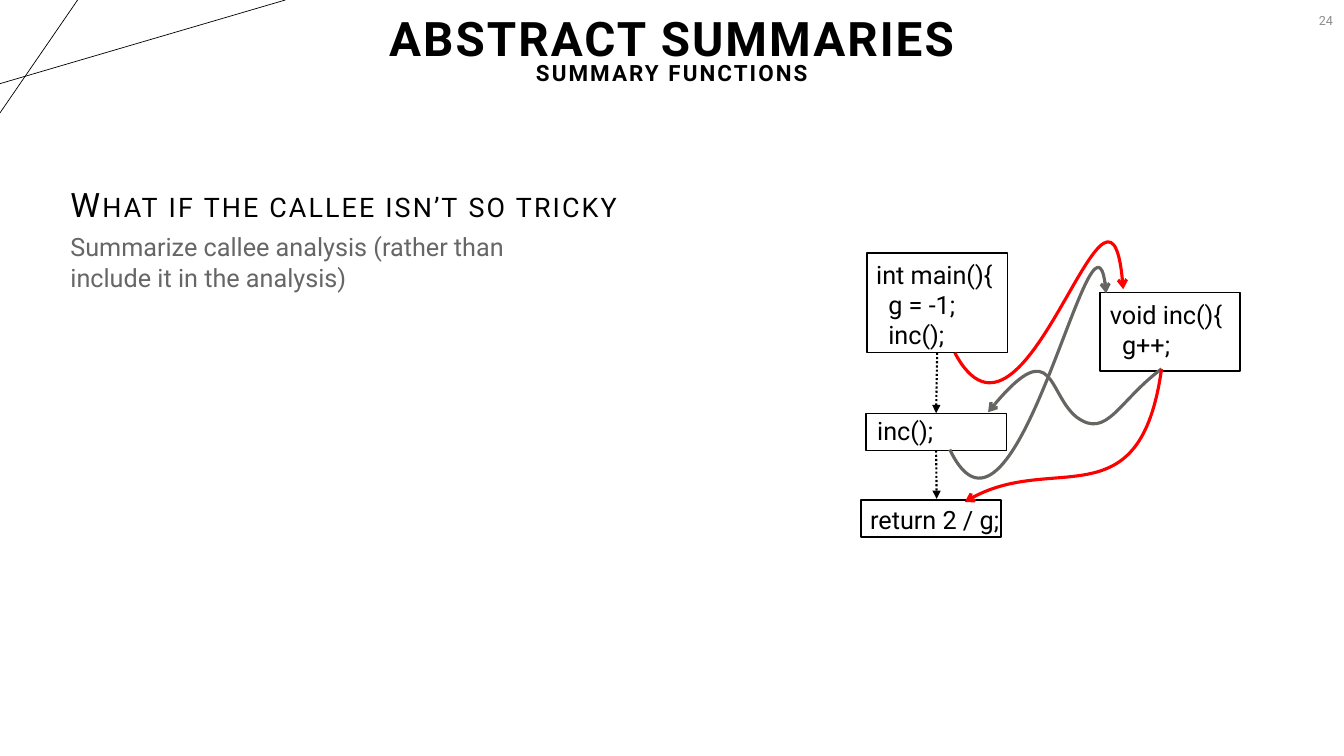
from dataclasses import dataclass

from lxml.etree import SubElement
from pptx import Presentation
from pptx.dml.color import RGBColor
from pptx.enum.dml import MSO_LINE
from pptx.enum.shapes import MSO_CONNECTOR, MSO_SHAPE
from pptx.enum.text import MSO_ANCHOR, PP_ALIGN
from pptx.oxml.ns import qn
from pptx.util import Inches, Pt

STRAIGHT = MSO_CONNECTOR.STRAIGHT
RECTANGLE = MSO_SHAPE.RECTANGLE
DOTTED = MSO_LINE.ROUND_DOT
TOP, MIDDLE = MSO_ANCHOR.TOP, MSO_ANCHOR.MIDDLE
LEFT, CENTER, RIGHT = PP_ALIGN.LEFT, PP_ALIGN.CENTER, PP_ALIGN.RIGHT
TOP_SIDE, BOTTOM_SIDE = 0, 2


@dataclass(frozen=True)
class Theme:
    font: str = "Roboto"
    ink: str = "000000"
    paper: str = "FFFFFF"
    body: str = "666666"
    page: str = "8C8C8C"
    first_call: str = "FF0000"
    second_call: str = "666562"
    title_size: int = 34
    heading_size: int = 24
    body_size: int = 18
    subtitle_size: int = 16
    page_size: int = 9
    tracking: int = 150
    heading_spacing: float = 0.9


THEME = Theme()


# Shared helpers
def color(value):
    return RGBColor.from_string(value)


def format_paragraph(paragraph, size, ink, align=LEFT, bold=False, tracked=False, small_caps=False):
    paragraph.alignment = align
    if tracked:
        paragraph.line_spacing = THEME.heading_spacing
    for run in paragraph.runs:
        run.font.name = THEME.font
        run.font.size = Pt(size)
        run.font.bold = bold
        run.font.color.rgb = color(ink)
        properties = run.font._element
        if tracked:
            properties.set("spc", str(THEME.tracking))
        if small_caps:
            properties.set("cap", "small")


def add_text(slide, box, text, size, ink, anchor=TOP, **style):
    text_box = slide.shapes.add_textbox(*map(Inches, box))
    frame = text_box.text_frame
    frame.word_wrap = True
    frame.vertical_anchor = anchor
    frame.text = text
    format_paragraph(frame.paragraphs[0], size, ink, **style)
    return text_box


def add_line(slide, start, end, width):
    line = slide.shapes.add_connector(STRAIGHT, *map(Inches, (*start, *end)))
    line.line.color.rgb = color(THEME.ink)
    line.line.width = Pt(width)
    SubElement(line._element.spPr, qn("a:effectLst"))
    return line


def add_arrowhead(shape, kind):
    SubElement(shape.line._get_or_add_ln(), qn("a:tailEnd"), type=kind)


def curve_range(values, steps=100):
    """Lowest and highest value along joined cubic curves on one axis."""
    reached = []
    for first in range(0, len(values) - 1, 3):
        a, b, c, d = values[first:first + 4]
        for step in range(steps + 1):
            t = step / steps
            u = 1 - t
            reached.append(a * u ** 3 + 3 * b * t * u ** 2 + 3 * c * u * t ** 2 + d * t ** 3)
    return min(reached), max(reached)


# Corner lines, page number and titles
def add_header(slide, left, top, width):
    add_line(slide, (left, top + 0.83), (left + 2.83, top), 0.5)
    add_line(slide, (left + 0.77, top), (left, top + 1.12), 0.5)
    add_text(slide, (left + width - 3.01, top, 3, 0.4), "24", THEME.page_size,
             THEME.page, MIDDLE, align=RIGHT)
    titles = (("ABSTRACT SUMMARIES", THEME.title_size, -0.32),
              ("SUMMARY FUNCTIONS", THEME.subtitle_size, 0.01))
    for text, size, offset in titles:
        add_text(slide, (left + 0.01, top + offset, width - 0.02, 1.45), text, size,
                 THEME.ink, MIDDLE, align=CENTER, bold=True, tracked=True)


# Heading with its explanation
def add_explanation(slide, left, top):
    heading = add_text(slide, (left, top, 8.37, 0.83), "What if the callee isn’t so tricky",
                       THEME.heading_size, THEME.ink, tracked=True, small_caps=True)
    heading.text_frame.paragraphs[0].space_before = Pt(10)
    add_text(slide, (left, top + 0.43, 4.53, 0.71),
             "Summarize callee analysis (rather than include it in the analysis)",
             THEME.body_size, THEME.body)


# Call graph
def add_code_box(slide, box, inset, first_line, *indented_lines):
    shape = slide.shapes.add_shape(RECTANGLE, *map(Inches, box))
    shape.shadow.inherit = False
    shape.fill.solid()
    shape.fill.fore_color.rgb = color(THEME.paper)
    shape.line.color.rgb = color(THEME.ink)
    shape.line.width = Pt(1)
    frame = shape.text_frame
    frame.word_wrap = True
    frame.vertical_anchor = TOP
    frame.margin_left, frame.margin_top = map(Inches, inset)
    frame.margin_right = frame.margin_bottom = 0
    frame.text = "\n".join((first_line, *indented_lines))
    for index, paragraph in enumerate(frame.paragraphs):
        format_paragraph(paragraph, THEME.body_size, THEME.ink)
        if index:
            paragraph._p.get_or_add_pPr().set("marL", str(Inches(0.12)))
    return shape


def add_curve(slide, controls, ink):
    points = [(Inches(x), Inches(y)) for x, y in controls]
    builder = slide.shapes.build_freeform(*points[0])
    builder.add_line_segments(points[1:], close=False)
    curve = builder.convert_to_shape()

    # Fit the frame to the curve itself rather than to its control points
    (left, right), (top, bottom) = (curve_range(axis) for axis in zip(*points))
    left, top, width, height = map(round, (left, top, right - left, bottom - top))
    curve.left, curve.top, curve.width, curve.height = left, top, width, height

    # Replace the straight segments by cubic ones
    outline = curve._element.find(".//" + qn("a:path"))
    outline.set("w", str(width))
    outline.set("h", str(height))
    for segment in list(outline):
        outline.remove(segment)
    for index, (x, y) in enumerate(points):
        if index == 0:
            segment = SubElement(outline, qn("a:moveTo"))
        elif index % 3 == 1:
            segment = SubElement(outline, qn("a:cubicBezTo"))
        SubElement(segment, qn("a:pt"), x=str(x - left), y=str(y - top))

    curve.shadow.inherit = False
    curve.fill.background()
    curve.line.color.rgb = color(ink)
    curve.line.width = Pt(2.25)
    add_arrowhead(curve, "arrow")


def add_call_graph(slide, left, top):
    def place(x, y, *size):
        return (left + x, top + y, *size)

    main_box = add_code_box(slide, place(0.1, 0.21, 1.39, 0.99), (0.09, 0.06),
                            "int main(){", "g = -1;", "inc();")
    second = add_code_box(slide, place(0.09, 1.8, 1.39, 0.37), (0.11, 0.02), "inc();")
    add_code_box(slide, place(0.04, 2.66, 1.39, 0.37), (0.09, 0.04), "return 2 / g;")
    add_code_box(slide, place(2.41, 0.6, 1.39, 0.78), (0.1, 0.07), "void inc(){", "g++;")

    # Steps within main
    to_second = add_line(slide, place(0.79, 1.2), place(0.78, 1.8), 1.5)
    to_second.begin_connect(main_box, BOTTOM_SIDE)
    to_second.end_connect(second, TOP_SIDE)
    to_return = add_line(slide, place(0.78, 2.17), place(0.79, 2.65), 1.5)
    to_return.begin_connect(second, BOTTOM_SIDE)
    for step in (to_second, to_return):
        step.line.dash_style = DOTTED
        add_arrowhead(step, "triangle")

    # Calls into the callee and returns from it
    callee_exit = (3.02, 1.36)
    curves = (
        (THEME.second_call, ((0.92, 2.16), (1.57, 3.52), (2.37, -0.71), (2.47, 0.61))),
        (THEME.second_call, (callee_exit, (2.59, 1.68), (2.48, 2.06), (2.18, 1.84),
                             (1.89, 1.61), (1.96, 0.97), (1.3, 1.79))),
        (THEME.first_call, ((0.97, 1.2), (1.67, 2.51), (2.52, -1.16), (2.64, 0.57))),
        (THEME.first_call, (callee_exit, (2.81, 2.87), (1.91, 2.15), (1.07, 2.68))),
    )
    for ink, controls in curves:
        add_curve(slide, [place(*point) for point in controls], ink)


def main():
    presentation = Presentation()
    presentation.slide_width = Inches(13.33)
    presentation.slide_height = Inches(7.5)
    slide = presentation.slides.add_slide(presentation.slide_layouts[6])
    add_header(slide, 0, 0, 13.33)
    add_explanation(slide, 0.6, 1.82)
    add_call_graph(slide, 8.5, 2.3)
    presentation.save("out.pptx")


if __name__ == "__main__":
    main()
